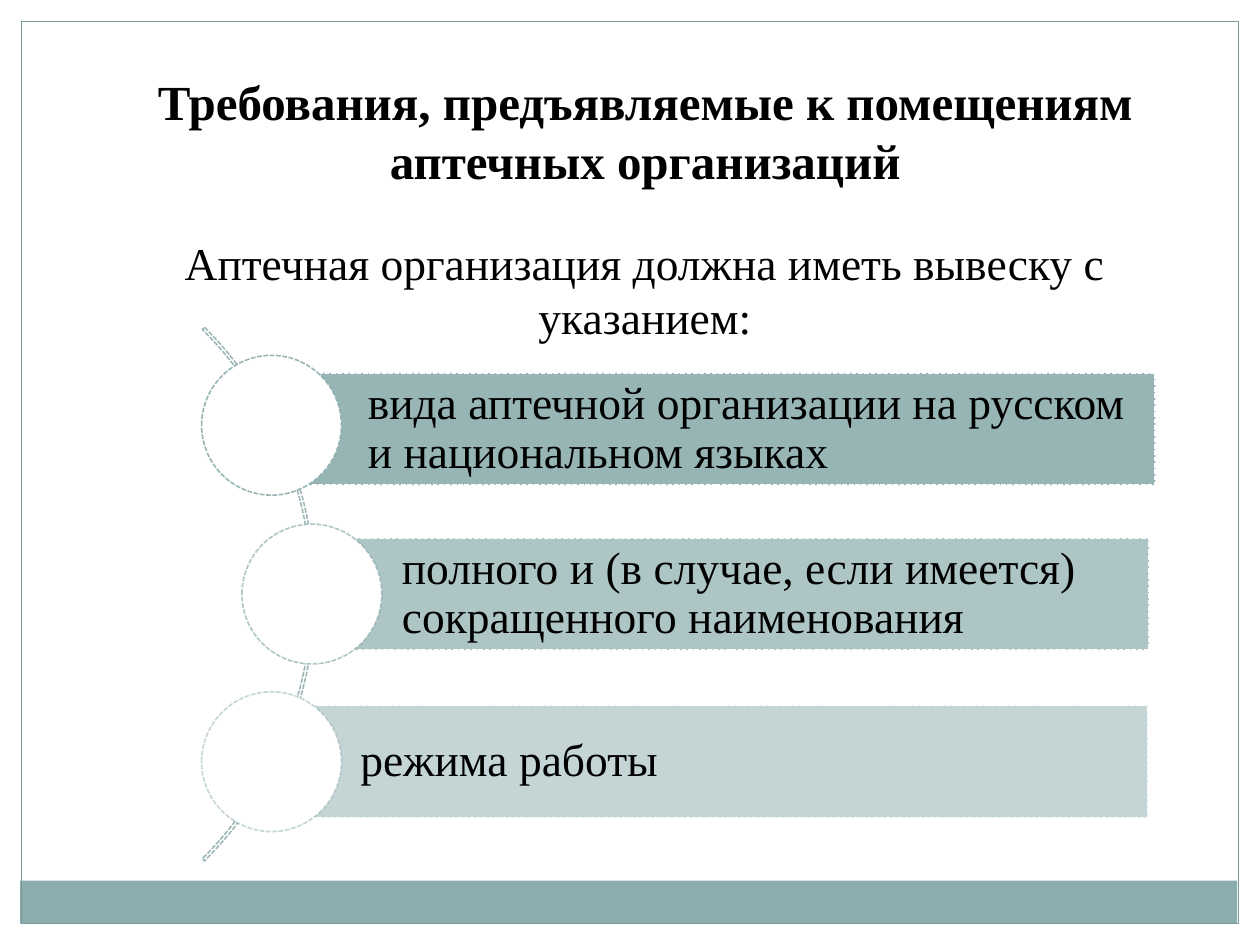
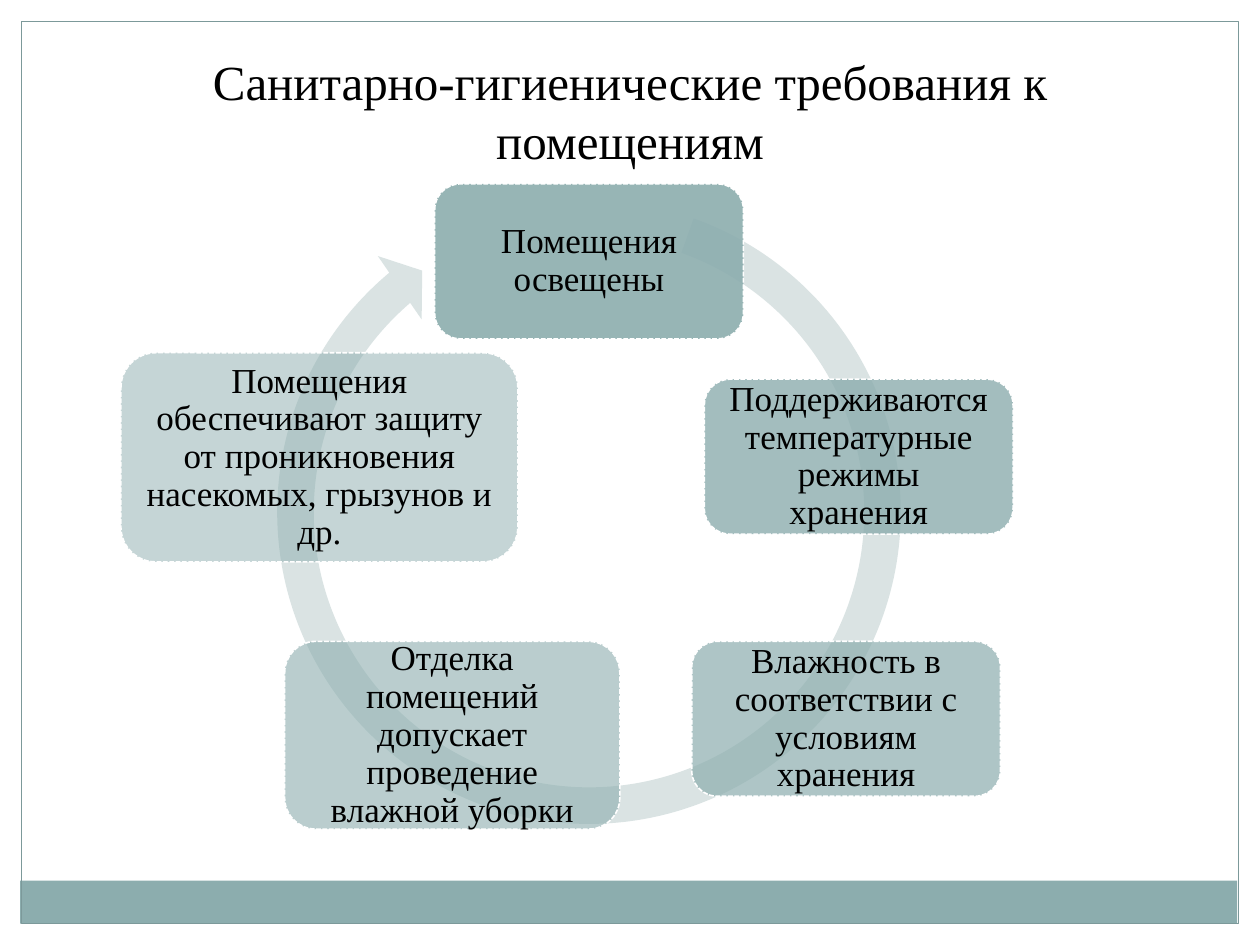
from dataclasses import dataclass
from typing import NamedTuple, Optional

from lxml.etree import SubElement
from pptx import Presentation
from pptx.dml.color import RGBColor as Rgb
from pptx.enum.dml import MSO_LINE_DASH_STYLE as Dash
from pptx.enum.shapes import MSO_SHAPE as Kind
from pptx.enum.text import MSO_ANCHOR as Anchor, PP_ALIGN as Align
from pptx.oxml.ns import qn
from pptx.shapes.autoshape import Shape
from pptx.slide import Slide
from pptx.text.text import TextFrame as Frame
from pptx.util import Inches, Pt


@dataclass(frozen=True)
class Theme:
    font: str = "Times New Roman"
    ink: Rgb = Rgb(0, 0, 0)
    white: Rgb = Rgb(255, 255, 255)
    teal: Rgb = Rgb(0x8C, 0xAD, 0xAE)
    edge: Rgb = Rgb(0x7C, 0x99, 0x9A)
    arc: Rgb = Rgb(0x9D, 0xB7, 0xB8)
    ring: Rgb = Rgb(0xDA, 0xE3, 0xE3)
    title: int = 28
    body: int = 26
    card: int = 20
    gap: int = 26
    thin: float = 0.75
    dash: float = 0.9


THEME = Theme()


class Box(NamedTuple):
    left: float
    top: float
    width: float
    height: float


class Ink(NamedTuple):
    color: Rgb
    alpha: int = 100


class Row(NamedTuple):
    text: str
    bar: Box
    dot: Box
    alpha: int


class Card(NamedTuple):
    text: str
    box: Box


# Drawing helpers
def fade(node, alpha: int) -> None:
    """Set the opacity, in percent, of the solid fill in a node."""
    if alpha < 100:
        color = node.find(qn("a:solidFill")).find(qn("a:srgbClr"))
        SubElement(color, qn("a:alpha")).set("val", str(alpha * 1000))


def draw(slide: Slide, kind: Kind, box: Box, fill: Optional[Ink] = None,
         line: Optional[Ink] = None, width: float = THEME.dash,
         dash: Optional[Dash] = Dash.SQUARE_DOT) -> Shape:
    shape = slide.shapes.add_shape(kind, *map(Inches, box))
    shape.shadow.inherit = False
    props = shape._element.spPr
    if fill:
        shape.fill.solid()
        shape.fill.fore_color.rgb = fill.color
        fade(props, fill.alpha)
    else:
        shape.fill.background()
    if line:
        shape.line.color.rgb = line.color
        shape.line.width = Pt(width)
        shape.line.dash_style = dash
        fade(props.find(qn("a:ln")), line.alpha)
    else:
        shape.line.fill.background()
    return shape


def write(frame: Frame, text: str, size: int, bold: bool = False,
          align: Align = Align.CENTER, fresh: bool = False):
    para = frame.add_paragraph() if fresh else frame.paragraphs[0]
    para.alignment = align
    run = para.add_run()
    run.text = text
    font = run.font
    font.name, font.size, font.bold = THEME.font, Pt(size), bold
    font.color.rgb = THEME.ink
    return para


def label(shape: Shape, text: str, size: int, align: Align,
          left: float, pad: float) -> None:
    frame = shape.text_frame
    frame.word_wrap = True
    frame.vertical_anchor = Anchor.MIDDLE
    frame.margin_left = Inches(left)
    frame.margin_top = frame.margin_right = frame.margin_bottom = Inches(pad)
    write(frame, text, size, align=align).line_spacing = 0.9


def head(slide: Slide, box: Box, text: str, bold: bool = False) -> Frame:
    frame = slide.shapes.add_textbox(*map(Inches, box)).text_frame
    frame.word_wrap = True
    write(frame, text, THEME.title, bold)
    return frame


def start(deck) -> Slide:
    """Add a blank slide with the shared bottom band and frame."""
    slide = deck.slides.add_slide(deck.slide_layouts[6])
    draw(slide, Kind.RECTANGLE, Box(0.16, 6.99, 9.66, 0.34), Ink(THEME.teal))
    draw(slide, Kind.RECTANGLE, Box(0.17, 0.17, 9.66, 7.16),
         line=Ink(THEME.edge), width=THEME.thin, dash=None)
    return slide


# Slide 1: what the sign must state
DOT = 1.11
ROWS = [
    Row("вида аптечной организации на русском и национальном языках",
        Box(2.21, 2.96, 6.96, 0.89), Box(1.6, 2.82, DOT, DOT), 90),
    Row("полного и (в случае, если имеется) сокращенного наименования",
        Box(2.48, 4.27, 6.64, 0.89), Box(1.92, 4.16, DOT, DOT), 70),
    Row("режима работы",
        Box(2.15, 5.6, 6.96, 0.89), Box(1.6, 5.49, DOT, DOT), 50),
]


def signs(deck) -> None:
    slide = start(deck)
    frame = head(slide, Box(0.59, 0.52, 9.06, 2.66),
                 "Требования, предъявляемые к помещениям аптечных организаций",
                 bold=True)
    lead = write(frame, "Аптечная организация должна иметь вывеску с указанием:",
                 THEME.body, fresh=True)
    lead.space_before = Pt(THEME.gap)

    arc = draw(slide, Kind.BLOCK_ARC, Box(-3.49, 1.72, 5.99, 5.99),
               line=Ink(THEME.arc))
    for i, value in enumerate((189, 27, 0.4 / 100)):
        arc.adjustments[i] = value

    for row in ROWS:
        bar = draw(slide, Kind.RECTANGLE, row.bar,
                   Ink(THEME.teal, row.alpha), Ink(THEME.white))
        label(bar, row.text, THEME.body, Align.LEFT, 0.71, 0.07)
        draw(slide, Kind.OVAL, row.dot, Ink(THEME.white),
             Ink(THEME.teal, row.alpha))


# Slide 2: cycle of hygiene rules
CARDS = [
    Card("Помещения освещены", Box(3.45, 1.46, 2.45, 1.23)),
    Card("Поддерживаются температурные режимы хранения",
         Box(5.59, 3.01, 2.45, 1.23)),
    Card("Влажность в соответствии с условиям хранения",
         Box(5.49, 5.09, 2.45, 1.23)),
    Card("Отделка помещений допускает проведение влажной уборки",
         Box(2.26, 5.09, 2.66, 1.49)),
    Card("Помещения обеспечивают защиту от проникновения насекомых, "
         "грызунов и др.", Box(0.96, 2.8, 3.15, 1.66)),
]


def cycle(deck) -> None:
    slide = start(deck)
    head(slide, Box(0.67, 0.36, 8.66, 1.04),
         "Санитарно-гигиенические требования к помещениям")

    ring = draw(slide, Kind.CIRCULAR_ARROW, Box(2.04, 1.43, 5.27, 5.27),
                Ink(THEME.ring))
    for i, value in enumerate((5.5 / 100, 3.31, 137.91, 173.77, 5.8 / 100)):
        ring.adjustments[i] = value

    for i, card in enumerate(CARDS):
        shape = draw(slide, Kind.ROUNDED_RECTANGLE, card.box,
                     Ink(THEME.teal, 90 - 10 * i), Ink(THEME.white))
        label(shape, card.text, THEME.card, Align.CENTER, 0.1, 0.08)
        shape.text_frame.margin_right = Inches(0.1)


def main() -> None:
    deck = Presentation()
    deck.slide_width, deck.slide_height = Inches(10), Inches(7.5)
    signs(deck)
    cycle(deck)
    deck.save("out.pptx")


if __name__ == "__main__":
    main()
